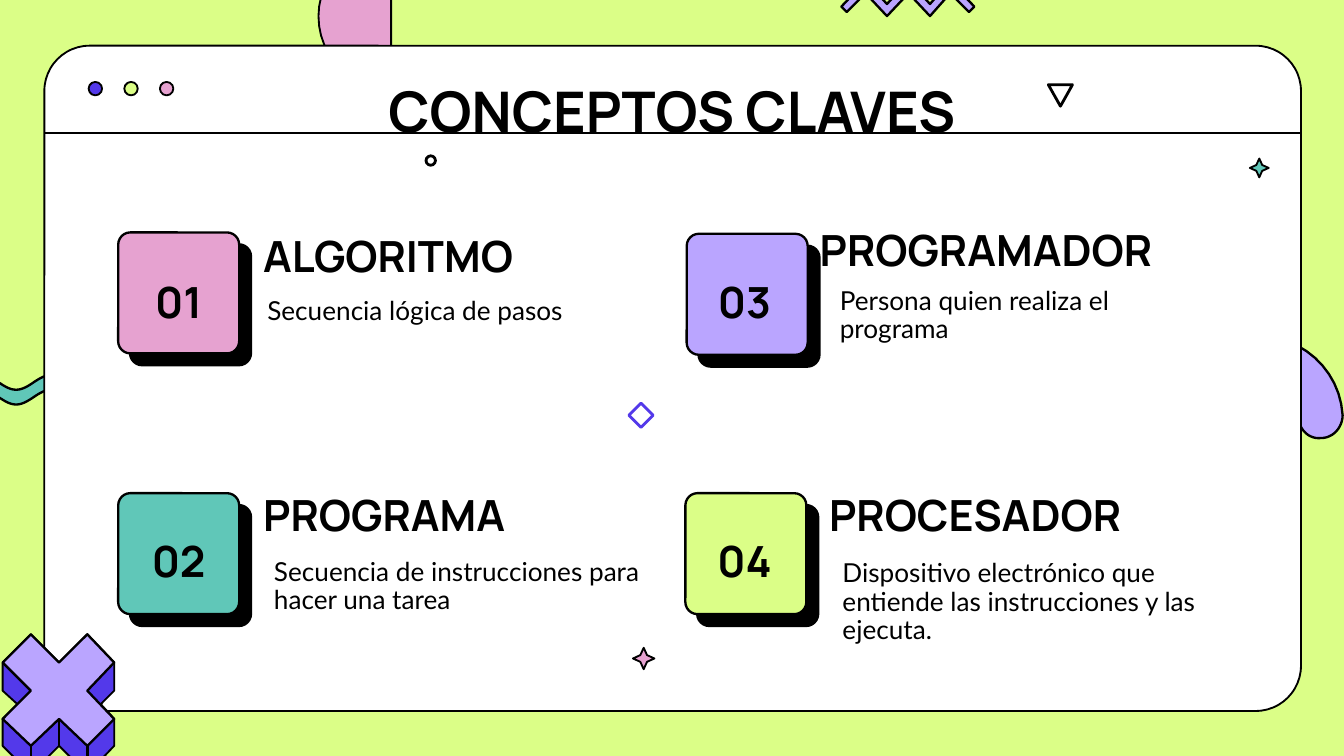
"""Build the slide of four key concepts inside a window frame."""
from dataclasses import dataclass
from math import cos, pi
from typing import Optional

from lxml.etree import SubElement
from pptx import Presentation
from pptx.dml.color import RGBColor as Rgb
from pptx.enum.shapes import MSO_CONNECTOR as Link, MSO_SHAPE as Form
from pptx.enum.text import MSO_ANCHOR as Anchor, PP_ALIGN as Align
from pptx.oxml.ns import qn
from pptx.shapes.base import BaseShape as Shape
from pptx.slide import Slide
from pptx.text.text import TextFrame as Frame
from pptx.util import Inches, Pt

HUES = {"lime": "DBFE87", "pink": "E6A2D0", "teal": "60C7B8", "lilac": "BAA5FF",
        "blue": "5339EA", "white": "FFFFFF", "black": "000000"}
Point = tuple[float, float]
Box = tuple[float, float, float, float]


@dataclass
class Concept:
    num: str
    name: str
    gloss: str
    hue: str
    tile: Point
    mark: Point
    head: Point
    note: Point


@dataclass
class Icon:
    form: Form
    box: Box
    fill: Optional[str]
    line: str = "black"
    width: float = 1
    adj: Optional[float] = None
    turn: float = 0


CONCEPTS = [
    Concept("01", "ALGORITMO", "Secuencia lógica de pasos", "pink",
            (0.88, 1.73), (0.8, 1.98), (1.86, 1.7), (1.89, 2.17)),
    Concept("02", "PROGRAMA", "Secuencia de instrucciones para hacer una tarea", "teal",
            (0.88, 3.67), (0.8, 3.91), (1.86, 3.63), (1.94, 4.11)),
    Concept("03", "PROGRAMADOR", "Persona quien realiza el programa", "lilac",
            (5.11, 1.74), (5.01, 1.98), (6, 1.66), (6.15, 2.09)),
    Concept("04", "PROCESADOR",
            "Dispositivo electrónico que entiende las instrucciones y las ejecuta.", "lime",
            (5.1, 3.67), (5.01, 3.91), (6.07, 3.63), (6.17, 4.12)),
]
ICONS = [
    Icon(Form.STAR_4_POINT, (4.71, 4.82, 0.16, 0.16), "pink", adj=0.22),
    Icon(Form.STAR_4_POINT, (9.3, 1.18, 0.14, 0.14), "teal", adj=0.22),
    Icon(Form.ISOSCELES_TRIANGLE, (7.8, 0.63, 0.18, 0.16), None, width=1.5, turn=180),
    Icon(Form.DIAMOND, (4.68, 3, 0.18, 0.18), None, "blue", 1.5),
    Icon(Form.OVAL, (3.17, 1.16, 0.07, 0.07), None, width=1.5),
]
DOTS = ["blue", "lime", "pink"]
ARCH = [(2.37, 0.12), (2.37, 0.42, 2.61, 0.66, 2.91, 0.66), (2.91, -0.41),
        (2.61, -0.41, 2.37, -0.17, 2.37, 0.12)]
PETAL = [(9.08, 2.57), (9.16, 2.53, 9.25, 2.51, 9.34, 2.5),
         (9.68, 2.49, 9.97, 2.75, 9.99, 3.09), (9.99, 3.18, 9.92, 3.26, 9.83, 3.26),
         (9.74, 3.27, 9.67, 3.2, 9.66, 3.11), (9.66, 2.95, 9.52, 2.82, 9.36, 2.83),
         (9.28, 2.83, 9.21, 2.86, 9.16, 2.92), (9.1, 2.98, 9.07, 3.06, 9.08, 3.13),
         (9.08, 3.22, 9.01, 3.3, 8.92, 3.3), (8.83, 3.31, 8.76, 3.24, 8.75, 3.15),
         (8.74, 2.9, 8.88, 2.68, 9.08, 2.57)]
ZIGZAG = [(6.92, 0.12), (6.76, -0.05), (6.6, 0.12), (6.44, -0.05), (6.3, 0.09),
          (6.26, 0.05), (6.44, -0.14), (6.6, 0.03), (6.76, -0.14), (6.92, 0.03),
          (7.07, -0.14), (7.25, 0.05), (7.21, 0.09), (7.07, -0.05)]
CROSS = [(0.65, 4.72), (0.85, 4.93), (0.65, 5.14), (0.85, 5.35), (0.65, 5.55), (0.44, 5.35),
         (0.23, 5.55), (0.02, 5.35), (0.23, 5.14), (0.02, 4.93), (0.23, 4.72), (0.44, 4.93)]
BASE = [(0.85, 4.93), (0.85, 5.14), (0.75, 5.24), (0.85, 5.35), (0.85, 5.55), (0.65, 5.76),
        (0.44, 5.55), (0.23, 5.76), (0.02, 5.55), (0.02, 5.35), (0.13, 5.24), (0.02, 5.14),
        (0.02, 4.93), (0.23, 4.72), (0.44, 4.93), (0.65, 4.72)]


def color(hue: str) -> Rgb:
    return Rgb.from_string(HUES[hue])


def paint(shape: Shape, fill: Optional[str], line: str = "black", width: float = 1) -> None:
    shape.shadow.inherit = False
    if fill:
        shape.fill.solid()
        shape.fill.fore_color.rgb = color(fill)
    else:
        shape.fill.background()
    shape.line.color.rgb = color(line)
    shape.line.width = Pt(width)


def draw_icon(slide: Slide, icon: Icon) -> Shape:
    shape = slide.shapes.add_shape(icon.form, *map(Inches, icon.box))
    if icon.adj is not None:
        shape.adjustments[0] = icon.adj
    shape.rotation = icon.turn
    paint(shape, icon.fill, icon.line, icon.width)
    return shape


def trace(path: list[tuple], steps: int = 12) -> list[Point]:
    points = [path[0]]
    for part in path[1:]:
        if len(part) == 2:
            points.append(part)
            continue
        ends = [points[-1], part[:2], part[2:4], part[4:]]
        for step in range(1, steps + 1):
            t = step / steps
            mix = ((1 - t) ** 3, 3 * t * (1 - t) ** 2, 3 * t * t * (1 - t), t ** 3)
            points.append(tuple(sum(m * e[k] for m, e in zip(mix, ends)) for k in (0, 1)))
    return points


def draw_path(slide: Slide, path: list[tuple], fill: str, width: float = 1.25) -> None:
    first, *rest = [(Inches(x), Inches(y)) for x, y in trace(path)]
    pen = slide.shapes.build_freeform(*first)
    pen.add_line_segments(rest, close=True)
    paint(pen.convert_to_shape(), fill, width=width)


def draw_line(slide: Slide, start: Point, end: Point, width: float = 1) -> None:
    line = slide.shapes.add_connector(Link.STRAIGHT, *map(Inches, start + end))
    line.line.color.rgb = color("black")
    line.line.width = Pt(width)
    SubElement(line._element.spPr, qn("a:effectLst"))


def write(frame: Frame, text: str, size: float, font: str = "Manrope", bold: bool = True,
          align: Align = Align.LEFT, anchor: Anchor = Anchor.TOP) -> None:
    frame.text = text
    frame.word_wrap = True
    frame.vertical_anchor = anchor
    para = frame.paragraphs[0]
    para.alignment = align
    para.line_spacing = 0.9
    para.space_before = Pt(0)
    face = para.runs[0].font
    face.name, face.size, face.bold = font, Pt(size), bold
    face.color.rgb = color("black")


def add_box(slide: Slide, box: Box) -> Frame:
    return slide.shapes.add_textbox(*map(Inches, box)).text_frame


def draw_concept(slide: Slide, item: Concept) -> None:
    tile = draw_icon(slide, Icon(Form.ROUNDED_RECTANGLE, (*item.tile, 0.9, 0.9), item.hue,
                                 width=1.25, adj=0.1))
    cast = SubElement(tile._element.spPr.find(qn("a:effectLst")), qn("a:outerShdw"),
                      dist=str(Pt(9)), dir="2700000", algn="tl", rotWithShape="0")
    SubElement(cast, qn("a:srgbClr"), val=HUES["black"])
    write(add_box(slide, (*item.mark, 1.06, 0.57)), item.num, 23,
          align=Align.CENTER, anchor=Anchor.MIDDLE)
    write(add_box(slide, (*item.head, 3.05, 0.64)), item.name, 23)
    write(add_box(slide, (*item.note, 3.05, 0.43)), item.gloss, 14, "Lato", False)


def main() -> None:
    deck = Presentation()
    deck.slide_width = Inches(10)
    deck.slide_height = deck.slide_width * 9 // 16
    slide = deck.slides.add_slide(deck.slide_layouts[5])
    slide.background.fill.solid()
    slide.background.fill.fore_color.rgb = color("lime")

    crest = [(x / 50, 2.845 - 0.055 * cos(2 * pi * (x / 50 - 0.38) / 0.52))
             for x in range(-33, 33)]
    draw_path(slide, crest + [(x, y + 0.11) for x, y in reversed(crest)], "teal")
    draw_path(slide, PETAL, "lilac")
    draw_path(slide, ARCH, "pink", 1)
    draw_icon(slide, Icon(Form.ROUNDED_RECTANGLE, (0.33, 0.34, 9.35, 4.95), "white", adj=0.068))
    draw_line(slide, (0.33, 0.99), (9.67, 0.99))

    title = slide.shapes.title
    title.left, title.top, title.width, title.height = map(Inches, (0.79, 0.65, 8.42, 0.4))
    write(title.text_frame, "CONCEPTOS CLAVES", 30, align=Align.CENTER, anchor=Anchor.MIDDLE)
    slide.shapes._spTree.append(title._element)

    for item in CONCEPTS:
        draw_concept(slide, item)
    for icon in ICONS:
        draw_icon(slide, icon)
    for k, hue in enumerate(DOTS):
        draw_icon(slide, Icon(Form.OVAL, (0.66 + 0.265 * k, 0.61, 0.1, 0.1), hue))

    draw_path(slide, BASE, "blue", 1)
    draw_path(slide, CROSS, "lilac")
    for x, y in [(0.23, 5.55), (0.44, 5.35), (0.65, 5.55)]:
        draw_line(slide, (x, y), (x, y + 0.21), 1.25)
    draw_path(slide, ZIGZAG, "lilac")
    deck.save("out.pptx")


if __name__ == "__main__":
    main()
